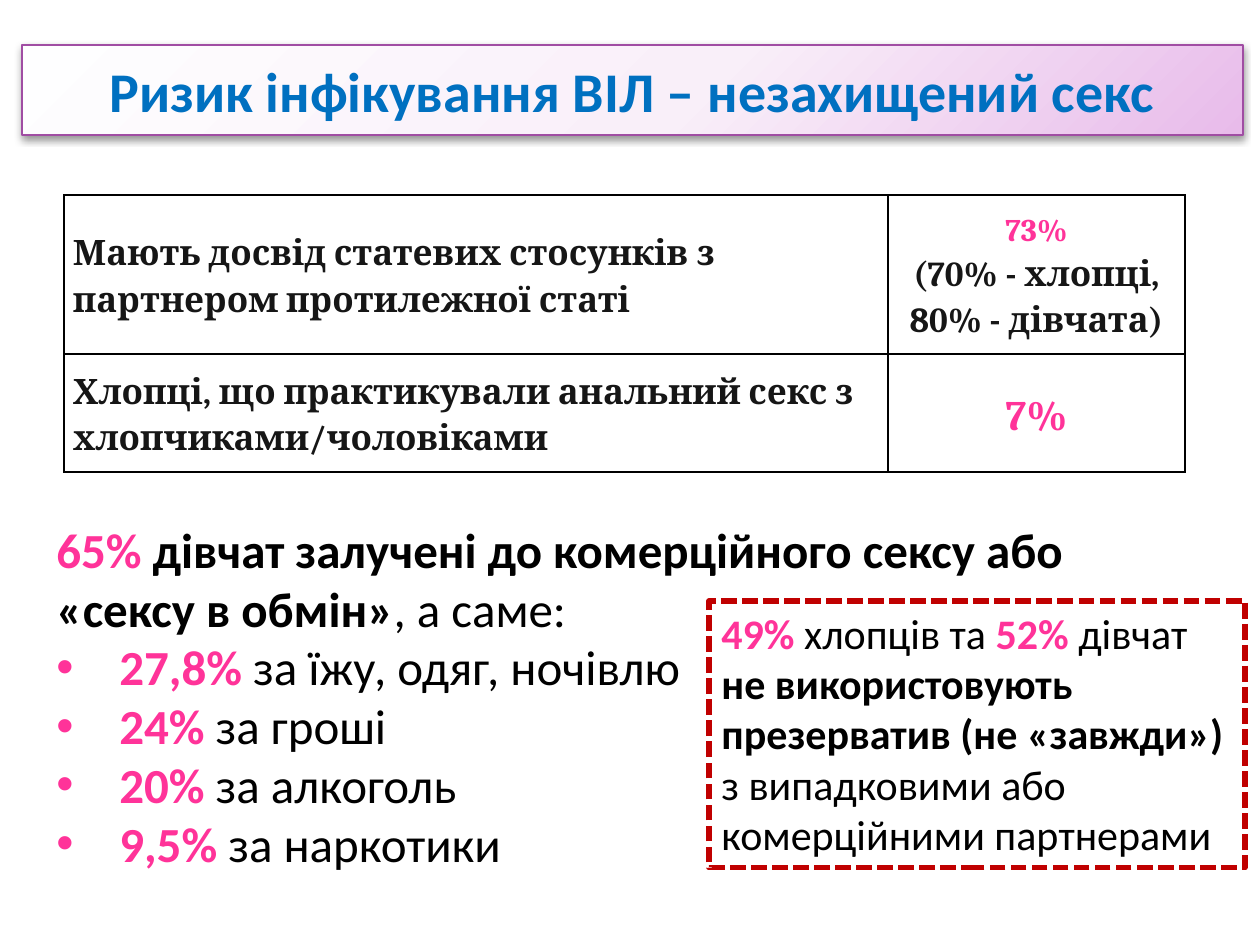
from dataclasses import dataclass

from lxml.etree import SubElement
from pptx import Presentation
from pptx.dml.color import RGBColor as RGB
from pptx.enum.dml import MSO_LINE
from pptx.enum.shapes import MSO_SHAPE as SHAPE
from pptx.enum.text import MSO_ANCHOR as ANCHOR, PP_ALIGN as ALIGN
from pptx.oxml import parse_xml
from pptx.oxml.ns import nsdecls, qn
from pptx.util import Emu, Pt


@dataclass(frozen=True)
class Theme:
    body_font: str = "Calibri"
    table_font: str = "Cambria"
    blue: str = "0070C0"
    pink: str = "FF3399"
    black: str = "000000"
    ink: str = "161616"
    white: str = "FFFFFF"
    red: str = "C00000"
    purple: str = "A04DA3"
    title_size: int = 32
    list_size: int = 28
    callout_size: int = 24
    cell_size: int = 20
    share_size: int = 18


theme = Theme()
PX = 914400 / 126


def px(*lengths):
    return [Emu(round(length * PX)) for length in lengths]


def write(paragraph, runs, size, font=theme.body_font):
    paragraph.font.name = font
    paragraph.font.size = Pt(size)
    bold_values = {bold for _, _, bold in runs}
    colors = {color for _, color, _ in runs}
    if len(bold_values) == 1:
        paragraph.font.bold = runs[0][2]
    if len(colors) == 1:
        paragraph.font.color.rgb = RGB.from_string(runs[0][1])
    for text, color, bold in runs:
        run = paragraph.add_run()
        run.text = text
        if len(bold_values) > 1:
            run.font.bold = bold
        if len(colors) > 1:
            run.font.color.rgb = RGB.from_string(color)


deck = Presentation()
deck.slide_width, deck.slide_height = px(1260, 945)
slide = deck.slides.add_slide(deck.slide_layouts[6])
shapes = slide.shapes

banner = shapes.add_shape(SHAPE.RECTANGLE, *px(22, 45, 1221, 90))
banner.line.color.rgb = RGB.from_string(theme.purple)
banner.line.width = Pt(0.75)
banner.shadow.inherit = False
banner_props = banner.fill._xPr
banner_props.find(qn("a:prstGeom")).addnext(parse_xml(
    f'<a:gradFill {nsdecls("a")} rotWithShape="1"><a:gsLst>'
    '<a:gs pos="0"><a:srgbClr val="FEFEFF"/></a:gs>'
    '<a:gs pos="55000"><a:srgbClr val="F9EFF9"/></a:gs>'
    '<a:gs pos="100000"><a:srgbClr val="E8BBEA"/></a:gs></a:gsLst>'
    '<a:path path="circle"><a:fillToRect l="-40000" t="-90000" r="140000" b="190000"/></a:path>'
    '</a:gradFill>'))
banner_props.find(qn("a:effectLst")).append(parse_xml(
    f'<a:outerShdw {nsdecls("a")} blurRad="52070" dist="25400" dir="5400000" rotWithShape="0">'
    '<a:srgbClr val="000000"><a:alpha val="40000"/></a:srgbClr></a:outerShdw>'))
banner.text_frame.word_wrap = True
banner.text_frame.vertical_anchor = ANCHOR.MIDDLE
heading = banner.text_frame.paragraphs[0]
heading.alignment = ALIGN.CENTER
write(heading, [("Ризик інфікування ВІЛ – незахищений секс", theme.blue, True)], theme.title_size)

reasons = shapes.add_textbox(*px(44, 513, 1142, 407)).text_frame
reasons.word_wrap = True
write(reasons.paragraphs[0], [
    ("65% ", theme.pink, True),
    ("дівчат залучені до комерційного сексу або «сексу в обмін»", theme.black, True),
    (", а саме:", theme.black, False),
], theme.list_size)
for share, reason in [
    ("27,8% ", "за їжу, одяг, ночівлю"),
    ("24% ", "за гроші"),
    ("20% ", "за алкоголь"),
    ("9,5% ", "за наркотики"),
]:
    item = reasons.add_paragraph()
    item_props = item._p.get_or_add_pPr()
    item_props.set("marL", "457200")
    item_props.set("indent", "-457200")
    SubElement(item_props, qn("a:buFont"), typeface="Arial")
    SubElement(item_props, qn("a:buChar"), char="•")
    write(item, [(share, theme.pink, True), (reason, theme.black, False)], theme.list_size)

callout = shapes.add_shape(SHAPE.RECTANGLE, *px(709, 601, 536, 267))
callout.shadow.inherit = False
callout.fill.background()
callout.line.color.rgb = RGB.from_string(theme.red)
callout.line.width = Pt(3)
callout.line.dash_style = MSO_LINE.SQUARE_DOT
callout.text_frame.word_wrap = True
callout.text_frame.vertical_anchor = ANCHOR.TOP
callout.text_frame.paragraphs[0].alignment = ALIGN.LEFT
write(callout.text_frame.paragraphs[0], [
    ("49%", theme.pink, True),
    (" хлопців та ", theme.black, False),
    ("52%", theme.pink, True),
    (" дівчат ", theme.black, False),
    ("не використовують презерватив (не «завжди») ", theme.black, True),
    ("з випадковими або комерційними партнерами", theme.black, False),
], theme.callout_size)

experience = [
    [
        [("Мають досвід статевих стосунків з партнером протилежної статі", theme.cell_size, theme.ink)],
        [("73%", theme.share_size, theme.pink),
         ("(70% - хлопці, 80% - дівчата)", theme.cell_size, theme.ink)],
    ],
    [
        [("Хлопці, що практикували анальний секс з хлопчиками/чоловіками", theme.cell_size, theme.ink)],
        [("7%", theme.callout_size, theme.pink)],
    ],
]
table = shapes.add_table(2, 2, *px(64, 195, 1121, 277)).table
table.first_row = table.horz_banding = False
for column, width in zip(table.columns, px(824, 297)):
    column.width = width
for row, height in zip(table.rows, px(159, 118)):
    row.height = height
for row, row_content in zip(table.rows, experience):
    for cell, alignment, lines in zip(row.cells, (ALIGN.LEFT, ALIGN.CENTER), row_content):
        cell.vertical_anchor = ANCHOR.MIDDLE
        cell.margin_left, cell.margin_top, cell.margin_right, cell.margin_bottom = px(9, 0, 9, 0)
        for side in ("lnL", "lnR", "lnT", "lnB"):
            border = SubElement(cell._tc.get_or_add_tcPr(), qn(f"a:{side}"), w="12700")
            SubElement(SubElement(border, qn("a:solidFill")), qn("a:srgbClr"), val=theme.black)
        cell.fill.solid()
        cell.fill.fore_color.rgb = RGB.from_string(theme.white)
        for index, (text, size, color) in enumerate(lines):
            line = cell.text_frame.add_paragraph() if index else cell.text_frame.paragraphs[0]
            line.alignment = alignment
            line.line_spacing = 1.15
            write(line, [(text, color, True)], size, theme.table_font)

deck.save("out.pptx")
